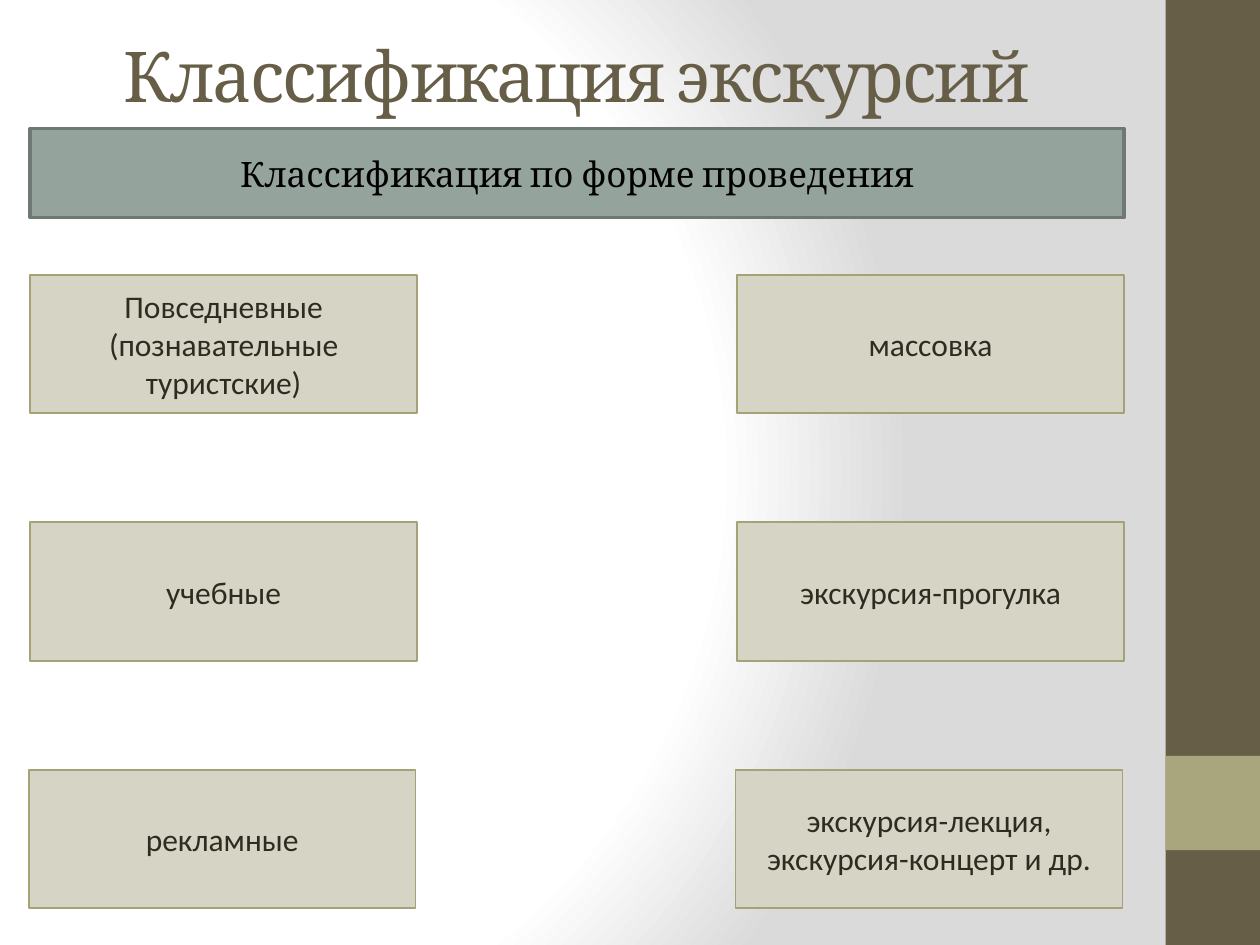
from lxml import etree
from pptx import Presentation
from pptx import util as u
from pptx.dml.color import RGBColor
from pptx.enum import shapes, text
from pptx.oxml.ns import qn

COLORS = {
    "white": "FFFFFF", "grey": "DADADA", "brown": "675E47", "olive": "A9A57C",
    "header": "95A39D", "header_line": "6E7974",
    "card": "D5D4C5", "card_line": "A6A278", "ink": "2F2B20", "black": "000000",
}


def write(frame, wording, font, size, color):
    frame.text = wording
    frame.word_wrap = True
    frame.auto_size = text.MSO_AUTO_SIZE.NONE
    frame.vertical_anchor = text.MSO_ANCHOR.MIDDLE
    paragraph = frame.paragraphs[0]
    paragraph.alignment = text.PP_ALIGN.CENTER
    run = paragraph.runs[0]
    run.font.name = font
    run.font.size = u.Pt(size)
    run.font.color.rgb = RGBColor.from_string(COLORS[color])
    return run


def add_block(left, top, width, height, fill, line=None, line_width=1):
    block = slide.shapes.add_shape(
        shapes.MSO_SHAPE.RECTANGLE, u.Cm(left), u.Cm(top), u.Cm(width), u.Cm(height))
    block.shadow.inherit = False
    block.fill.solid()
    block.fill.fore_color.rgb = RGBColor.from_string(COLORS[fill])
    if line:
        block.line.color.rgb = RGBColor.from_string(COLORS[line])
        block.line.width = u.Pt(line_width)
    else:
        block.line.fill.background()
    return block


deck = Presentation()
deck.slide_width, deck.slide_height = u.Cm(25.4), u.Cm(19.05)
slide = deck.slides.add_slide(deck.slide_layouts[5])

slide.background.fill.gradient()
gradient = slide.element.find(".//" + qn("a:gradFill"))
for child in list(gradient):
    gradient.remove(child)
stops = etree.SubElement(gradient, qn("a:gsLst"))
for percent, color in [(0, "white"), (75, "white"), (100, "grey")]:
    stop = etree.SubElement(stops, qn("a:gs"), pos=str(percent * 1000))
    etree.SubElement(stop, qn("a:srgbClr"), val=COLORS[color])
circle = etree.SubElement(gradient, qn("a:path"), path="circle")
etree.SubElement(circle, qn("a:fillToRect"), l="20000", t="50000", r="100000", b="50000")

add_block(23.5, 0, 1.9, 19.05, "brown")
add_block(23.5, 15.24, 1.9, 1.9, "olive")

title = slide.shapes.title
title.left, title.top, title.width, title.height = u.Cm(1.04), u.Cm(0.33), u.Cm(21.16), u.Cm(2.34)
heading = write(title.text_frame, "Классификация экскурсий", "Cambria", 40, "brown")
heading.font._element.set("spc", "-100")

criterion = add_block(0.61, 2.59, 22.05, 1.8, "header", "header_line", 2)
write(criterion.text_frame, "Классификация по форме проведения", "Cambria", 20, "black")

columns = [
    (0.61, ["Повседневные (познавательные туристские)", "учебные", "рекламные"]),
    (14.86, ["массовка", "экскурсия-прогулка", "экскурсия-лекция, экскурсия-концерт и др."]),
]
for left, forms in columns:
    for row, form in enumerate(forms):
        nudge = 0.03 if row == 2 else 0
        card = add_block(left - nudge, 5.54 + row * 4.99, 7.8, 2.79, "card", "card_line")
        write(card.text_frame, form, "Calibri", 18, "ink")

deck.save("out.pptx")
